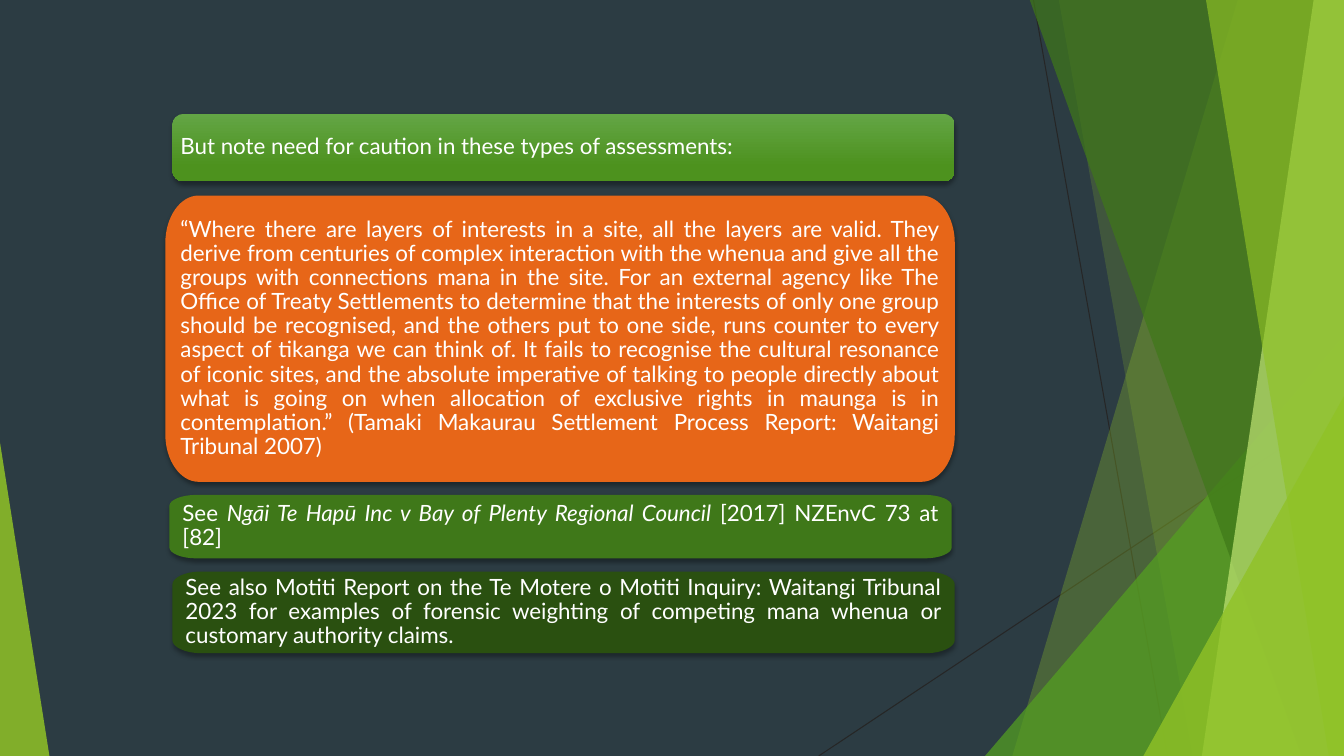
from lxml import etree
from pptx import Presentation, util as u
from pptx.dml.color import RGBColor
from pptx.enum import shapes, text
from pptx.oxml import parse_xml
from pptx.oxml.ns import qn, nsdecls

PX = 9144  # 100 px to the inch
WIDTH, HEIGHT = 1333, 750
FONT, SIZE, WHITE = "Lato", 16, "FFFFFF"
ARC = 0.55  # how far a control point reaches toward the corner

# start, end
RAYS = [((1025, 0), (1158, HEIGHT)), ((WIDTH, 403), (812, HEIGHT))]
# Bands reach the right edge: top-left x, bottom-left x, colour, opacity %
# Triangles: left, top, width, height, apex position, colour, opacity %
FACETS = [
    ("band", (1228, 1004), "90C226", 30),
    ("band", (1050, 1183), "90C226", 20),
    ("triangle", (977, 333, 356, 417, 1), "54A021", 72),
    ("band", (1021, 1291), "3F7819", 70),
    ("band", (1303, 1192), "C0E474", 70),
    ("band", (1196, 1318), "90C226", 65),
    ("triangle", (1134, 393, 199, 357, 1), "90C226", 80),
    ("triangle", (0, 439, 49, 311, 0), "90C226", 85),
]
# box, corner radii, inset, fill colours, runs of (wording, italic)
CARDS = [
    ((171, 113, 776, 67), (11, 11), 8, ["63A545", "4D921E"],
     [("But note need for caution in these types of assessments:", False)]),
    ((164, 194, 783, 284), (33, 47), 15, ["E76618"],
     [("“Where there are layers of interests in a site, all the layers are valid. "
       "They derive from centuries of complex interaction with the whenua and give "
       "all the groups with connections mana in the site. For an external agency "
       "like The Office of Treaty Settlements to determine that the interests of "
       "only one group should be recognised, and the others put to one side, runs "
       "counter to every aspect of tikanga we can think of. It fails to recognise "
       "the cultural resonance of iconic sites, and the absolute imperative of "
       "talking to people directly about what is going on when allocation of "
       "exclusive rights in maunga is in contemplation.” (Tamaki Makaurau "
       "Settlement Process Report: Waitangi Tribunal 2007)", False)]),
    ((168, 491, 776, 63), (27, 11), 13, ["3F7819"],
     [("See ", False),
      ("Ngāi Te Hapū Inc v Bay of Plenty Regional Council ", True),
      ("[2017] NZEnvC 73 at [82]", False)]),
    ((171, 567, 776, 81), (28, 13), 13, ["2A5010"],
     [("See also Motiti Report on the Te Motere o Motiti Inquiry: Waitangi Tribunal "
       "2023 for examples of forensic weighting of competing mana whenua or "
       "customary authority claims.", False)]),
]


def rgb(hex_colour):
    return RGBColor.from_string(hex_colour)


def paint(shape, colours, opacity=100):
    """Fill with one colour, or with two as a downward gradient; no outline."""
    if len(colours) == 1:
        shape.fill.solid()
        shape.fill.fore_color.rgb = rgb(colours[0])
        if opacity < 100:
            colour = shape._element.spPr.find(".//" + qn("a:srgbClr"))
            etree.SubElement(colour, qn("a:alpha"), val=str(opacity * 1000))
    else:
        shape.fill.gradient()
        shape.fill.gradient_angle = 270
        for stop, colour, position in zip(shape.fill.gradient_stops, colours, (0, 0.78)):
            stop.color.rgb = rgb(colour)
            stop.position = position
    shape.line.fill.background()
    shape.shadow.inherit = False


def drop_shadow(shape):
    shape._element.spPr.find(qn("a:effectLst")).append(parse_xml(
        f'<a:outerShdw {nsdecls("a")} blurRad="{u.Pt(3)}" dist="{u.Pt(2)}" '
        'dir="5400000" rotWithShape="0"><a:srgbClr val="000000">'
        '<a:alpha val="35000"/></a:srgbClr></a:outerShdw>'))


def add_outline(points):
    start, *rest = points
    builder = slide.shapes.build_freeform(*start, scale=PX)
    builder.add_line_segments(rest, close=True)
    return builder.convert_to_shape()


def add_rounded_box(box, radii):
    """Outline an octagon, then bend its four cut corners into elliptical arcs."""
    left, top, width, height = box
    rx, ry = radii
    right, bottom = left + width, top + height
    ends = [(left, top + ry), (left + rx, top), (right - rx, top), (right, top + ry),
            (right, bottom - ry), (right - rx, bottom), (left + rx, bottom),
            (left, bottom - ry)]
    corners = [(left, top), (right, top), (right, bottom), (left, bottom)]
    outline = add_outline(ends)
    sides = list(outline._element.iter(qn("a:lnTo")))
    for corner, cut, start, end in zip(corners, sides[::2], ends[::2], ends[1::2]):
        cut.tag = qn("a:cubicBezTo")
        controls = [[e + (c - e) * ARC for e, c in zip(point, corner)]
                    for point in (start, end)]
        for position, (x, y) in enumerate(controls):
            cut.insert(position, cut.makeelement(
                qn("a:pt"), {"x": str(round(x - left)), "y": str(round(y - top))}))
    return outline


def add_ray(start, end):
    ray = slide.shapes.add_connector(
        shapes.MSO_CONNECTOR.STRAIGHT, *[v * PX for v in start + end])
    ray.line.color.rgb = rgb("262626")
    ray.line.width = u.Pt(0.75)
    etree.SubElement(ray._element.spPr, qn("a:effectLst"))


def add_facet(kind, geometry, colour, opacity):
    if kind == "band":
        top_x, bottom_x = geometry
        facet = add_outline([(top_x, -1), (WIDTH, -1), (WIDTH, HEIGHT), (bottom_x, HEIGHT)])
    else:
        *box, apex = geometry
        facet = slide.shapes.add_shape(
            shapes.MSO_SHAPE.ISOSCELES_TRIANGLE, *[v * PX for v in box])
        facet.adjustments[0] = apex
    paint(facet, [colour], opacity)


def add_card(box, radii, inset, colours, runs):
    card = add_rounded_box(box, radii)
    paint(card, colours)
    drop_shadow(card)
    frame = card.text_frame
    frame.word_wrap = True
    frame.vertical_anchor = text.MSO_ANCHOR.MIDDLE
    frame.margin_left = frame.margin_right = inset * PX
    frame.margin_top = frame.margin_bottom = inset * PX
    paragraph = frame.paragraphs[0]
    paragraph.alignment = text.PP_ALIGN.JUSTIFY
    paragraph.line_spacing = 0.9
    for wording, italic in runs:
        run = paragraph.add_run()
        run.text = wording
        run.font.name = FONT
        run.font.size = u.Pt(SIZE)
        run.font.italic = italic
        run.font.color.rgb = rgb(WHITE)


deck = Presentation()
deck.slide_width, deck.slide_height = WIDTH * PX, HEIGHT * PX
slide = deck.slides.add_slide(deck.slide_layouts[6])
slide.background.fill.solid()
slide.background.fill.fore_color.rgb = rgb("2C3C43")

for ray_ends in RAYS:
    add_ray(*ray_ends)
for facet_parts in FACETS:
    add_facet(*facet_parts)
for card_parts in CARDS:
    add_card(*card_parts)

deck.save("out.pptx")
